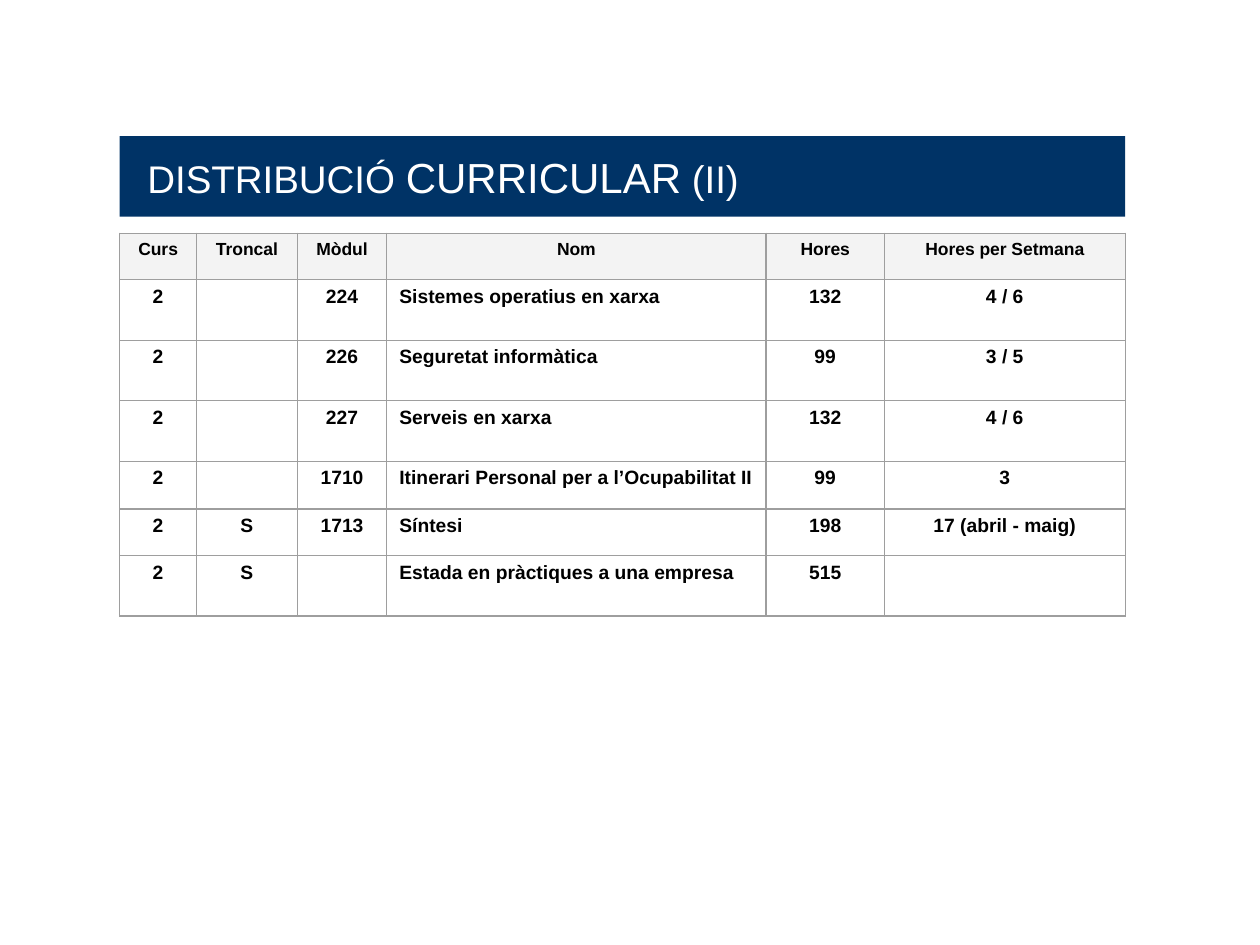
from lxml import etree
from pptx import Presentation
from pptx.dml.color import RGBColor
from pptx.enum.text import MSO_ANCHOR, MSO_AUTO_SIZE, PP_ALIGN
from pptx.oxml.ns import qn
from pptx.util import Inches, Pt

LEFT, CENTER = PP_ALIGN.LEFT, PP_ALIGN.CENTER
MIDDLE, NO_FIT = MSO_ANCHOR.MIDDLE, MSO_AUTO_SIZE.NONE

COLORS = {"navy": "003366", "white": "FFFFFF", "black": "000000",
          "header": "F3F3F3", "border": "9E9E9E"}
FONT = "Arial"

TITLE = [("DISTRIBUCIÓ ", 22), ("CURRICULAR", 24), (" (II)", 22)]
ROWS = [
    ("Curs", "Troncal", "Mòdul", "Nom", "Hores", "Hores per Setmana"),
    ("2", "", "224", "Sistemes operatius en xarxa", "132", "4 / 6"),
    ("2", "", "226", "Seguretat informàtica", "99", "3 / 5"),
    ("2", "", "227", "Serveis en xarxa", "132", "4 / 6"),
    ("2", "", "1710", "Itinerari Personal per a l’Ocupabilitat II", "99", "3"),
    ("2", "S", "1713", "Síntesi", "198", "17 (abril - maig)"),
    ("2", "S", "", "Estada en pràctiques a una empresa", "515", ""),
]
COL_WIDTHS = [0.61, 0.8, 0.71, 3.01, 0.94, 1.91]
ROW_HEIGHTS = [0.37, 0.48, 0.48, 0.48, 0.38, 0.37, 0.48]
NAME_COL = 3
X, WIDTH = 0.95, 7.98


def rgb(name):
    return RGBColor.from_string(COLORS[name])


def add_run(p, text, size, color, bold):
    r = p.add_run()
    r.text = text
    for key, value in {"name": FONT, "size": Pt(size), "bold": bold}.items():
        setattr(r.font, key, value)
    r.font.color.rgb = rgb(color)


def set_borders(cell):
    tcPr = cell._tc.get_or_add_tcPr()
    for i, side in enumerate(("a:lnL", "a:lnR", "a:lnT", "a:lnB")):
        ln = etree.Element(qn(side), w=str(Pt(0.75)))
        fill = etree.SubElement(ln, qn("a:solidFill"))
        etree.SubElement(fill, qn("a:srgbClr"), val=COLORS["border"])
        tcPr.insert(i, ln)


def add_title(s):
    sp = s.shapes.title
    box = {"left": X, "top": 1.08, "width": WIDTH, "height": 0.64}
    for key, value in box.items():
        setattr(sp, key, Inches(value))
    sp.fill.solid()
    sp.fill.fore_color.rgb = rgb("navy")
    tf = sp.text_frame
    layout = {"margin_left": Inches(0.22), "margin_right": Inches(0.1),
              "margin_top": Inches(0.05), "margin_bottom": Inches(0.05),
              "vertical_anchor": MIDDLE, "word_wrap": True, "auto_size": NO_FIT}
    for key, value in layout.items():
        setattr(tf, key, value)
    p = tf.paragraphs[0]
    p.alignment = LEFT
    for text, size in TITLE:
        add_run(p, text, size, "white", False)


def add_modules_table(s):
    table = s.shapes.add_table(
        len(ROWS), len(COL_WIDTHS), Inches(X), Inches(1.85),
        Inches(WIDTH), Inches(sum(ROW_HEIGHTS))).table
    table.horz_banding = False
    for col, width in zip(table.columns, COL_WIDTHS):
        col.width = Inches(width)
    for row, height in zip(table.rows, ROW_HEIGHTS):
        row.height = Inches(height)
    for i, values in enumerate(ROWS):
        size = 11 if i else 10
        for j, text in enumerate(values):
            cell = table.cell(i, j)
            cell.fill.solid()
            cell.fill.fore_color.rgb = rgb("white" if i else "header")
            set_borders(cell)
            p = cell.text_frame.paragraphs[0]
            p.alignment = LEFT if i and j == NAME_COL else CENTER
            if text:
                add_run(p, text, size, "black", True)
            else:
                etree.SubElement(p._p, qn("a:endParaRPr"), sz=str(size * 100))


prs = Presentation()
prs.slide_width, prs.slide_height = Inches(10), Inches(7.5)
s = prs.slides.add_slide(prs.slide_layouts[5])
add_title(s)
add_modules_table(s)
prs.save("out.pptx")
